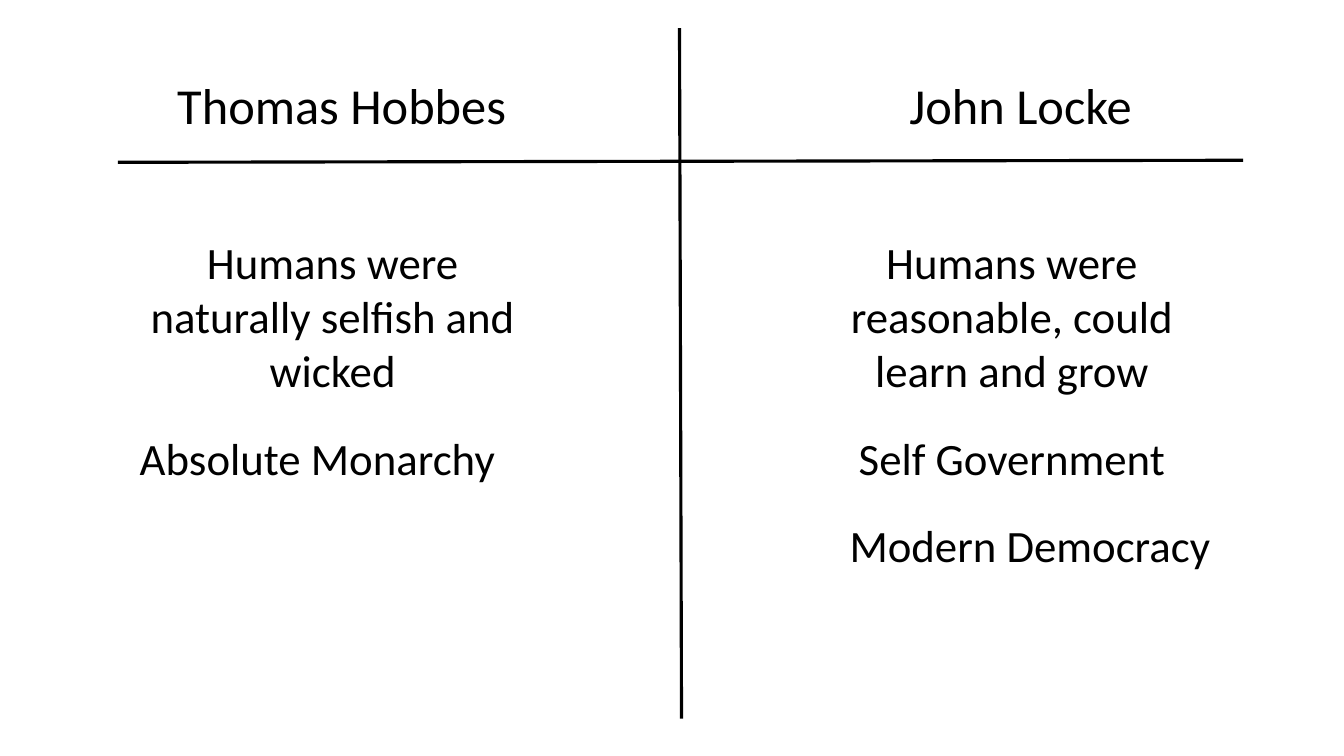
from typing import NamedTuple

from lxml.etree import SubElement
from pptx import Presentation
from pptx.dml.color import RGBColor
from pptx.enum.shapes import MSO_CONNECTOR
from pptx.enum.text import MSO_AUTO_SIZE, PP_ALIGN
from pptx.oxml.ns import qn
from pptx.slide import Slide
from pptx.util import Inches, Length, Pt

BLACK = RGBColor(0x00, 0x00, 0x00)
FONT = "Calibri"
SLIDE_W, SLIDE_H = Inches(13.33), Inches(7.5)


class Row(NamedTuple):
    top: float
    height: float
    size: int


class Label(NamedTuple):
    text: str
    row: Row
    left: float
    width: float


class Divider(NamedTuple):
    x1: float
    y1: float
    x2: float
    y2: float


HEADING = Row(9.2, 9.47, 36)
NATURE = Row(30.4, 22.93, 32)
GOVERNMENT = Row(56.27, 8.53, 32)
LEGACY = Row(67.87, 8.53, 32)

BODY_W = 31.95
LOCKE_LEFT = 59.32
LOCKE_INDENT = 60.67

DIVIDERS = [
    Divider(50.56, 3.73, 50.71, 95.07),
    Divider(8.78, 21.47, 92.5, 21.2),
]

LABELS = [
    Label("Thomas Hobbes", HEADING, 11.25, 28.35),
    Label("John Locke", HEADING, LOCKE_INDENT, 30.53),
    Label("Humans were naturally selfish and wicked", NATURE, 8.78, BODY_W),
    Label("Humans were reasonable, could learn and grow", NATURE, LOCKE_LEFT, BODY_W),
    Label("Absolute Monarchy", GOVERNMENT, 7.65, BODY_W),
    Label("Self Government", GOVERNMENT, LOCKE_LEFT, BODY_W),
    Label("Modern Democracy", LEGACY, LOCKE_INDENT, BODY_W),
]


def across(percent: float) -> Length:
    return Length(round(SLIDE_W * percent / 100))


def down(percent: float) -> Length:
    return Length(round(SLIDE_H * percent / 100))


def add_divider(s: Slide, d: Divider) -> None:
    line = s.shapes.add_connector(
        MSO_CONNECTOR.STRAIGHT, across(d.x1), down(d.y1), across(d.x2), down(d.y2)
    )
    line.line.color.rgb = BLACK
    line.line.width = Pt(2.25)
    SubElement(line._element.spPr, qn("a:effectLst"))


def add_label(s: Slide, label: Label) -> None:
    row = label.row
    sp = s.shapes.add_textbox(
        across(label.left), down(row.top), across(label.width), down(row.height)
    )
    tf = sp.text_frame
    tf.word_wrap = True
    tf.auto_size = MSO_AUTO_SIZE.SHAPE_TO_FIT_TEXT
    p = tf.paragraphs[0]
    p.text = label.text
    p.alignment = PP_ALIGN.CENTER
    p.font.name = FONT
    p.font.size = Pt(row.size)
    p.font.color.rgb = BLACK


def main() -> None:
    prs = Presentation()
    prs.slide_width, prs.slide_height = SLIDE_W, SLIDE_H
    s = prs.slides.add_slide(prs.slide_layouts[6])
    for divider in DIVIDERS:
        add_divider(s, divider)
    for label in LABELS:
        add_label(s, label)
    prs.save("out.pptx")


if __name__ == "__main__":
    main()
